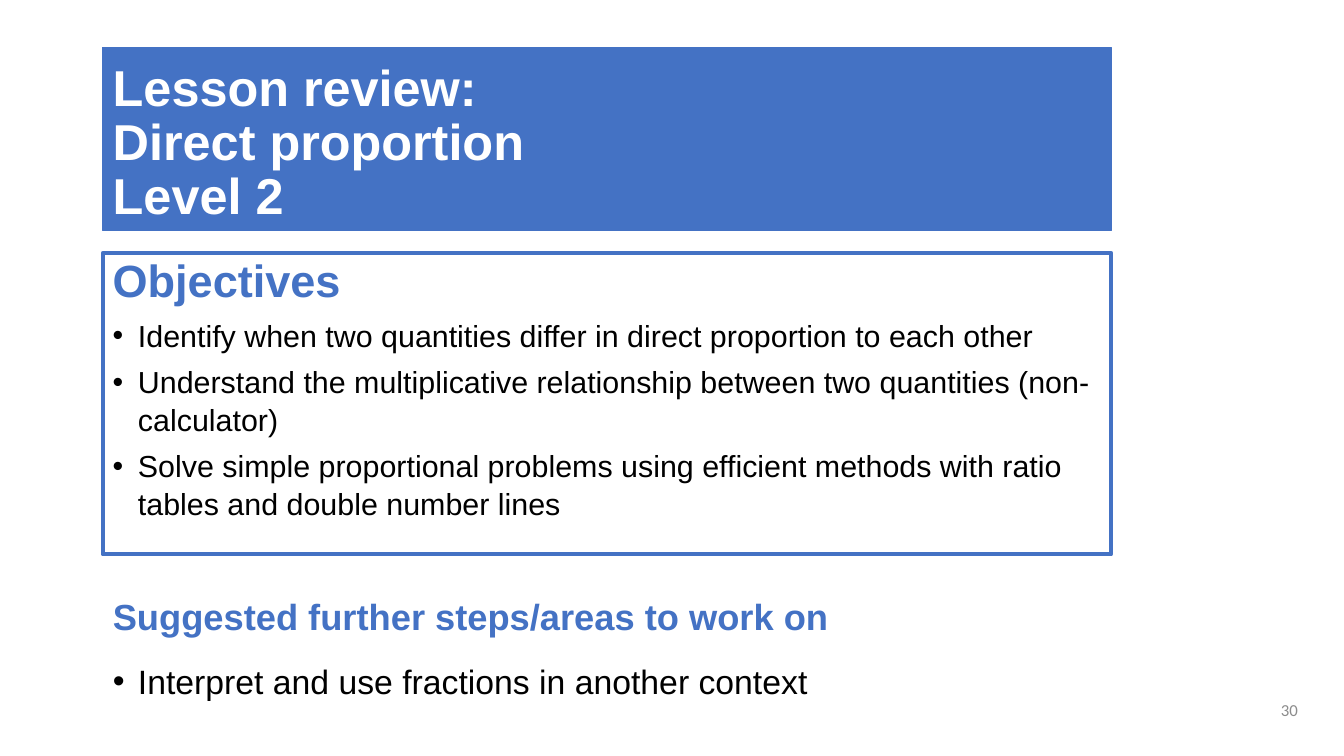
import pptx
import pptx.dml.color
import pptx.enum.shapes
import pptx.enum.text
import pptx.util
from lxml import etree
from pptx.oxml.ns import qn

COLORS = {"blue": "4472C4", "white": "FFFFFF", "black": "000000", "gray": "8C8C8C"}
WIDTH, HEIGHT = 13.33, 7.5

# Shares of the slide: left, top, width, height
LEFT, PANEL_WIDTH = 1.02 / WIDTH, 10 / WIDTH
TITLE_AREA = (LEFT, 0.47 / HEIGHT, PANEL_WIDTH, 1.82 / HEIGHT)
OBJECTIVES_AREA = (LEFT, 2.51 / HEIGHT, PANEL_WIDTH, 2.99 / HEIGHT)
NEXT_STEPS_AREA = (LEFT, 5.84 / HEIGHT, 10.45 / WIDTH, 1.18 / HEIGHT)
NUMBER_AREA = (9.97 / WIDTH, 6.84 / HEIGHT, 3 / WIDTH, 0.4 / HEIGHT)

TITLE_LINES = ["Lesson review:", "Direct proportion", "Level 2"]
OBJECTIVES = [
    "Identify when two quantities differ in direct proportion to each other",
    "Understand the multiplicative relationship between two quantities (non-calculator)",
    "Solve simple proportional problems using efficient methods with ratio tables and double number lines",
]
NEXT_STEPS = ["Interpret and use fractions in another context"]


def rgb(name):
    return pptx.dml.color.RGBColor.from_string(COLORS[name])


def place(area):
    return [pptx.util.Inches(round(share * size, 2))
            for share, size in zip(area, (WIDTH, HEIGHT, WIDTH, HEIGHT))]


def prepare_frame(shape, anchor="TOP"):
    frame = shape.text_frame
    frame.word_wrap = True
    frame.vertical_anchor = getattr(pptx.enum.text.MSO_ANCHOR, anchor)
    return frame


def add_panel(slide, area, line_width, fill=None, anchor="TOP"):
    shape = slide.shapes.add_shape(pptx.enum.shapes.MSO_SHAPE.RECTANGLE, *place(area))
    shape.shadow.inherit = False
    if fill:
        shape.fill.solid()
        shape.fill.fore_color.rgb = rgb(fill)
    else:
        shape.fill.background()
    shape.line.color.rgb = rgb("blue")
    shape.line.width = pptx.util.Pt(line_width)
    return prepare_frame(shape, anchor)


def add_text_area(slide, area, anchor="TOP"):
    return prepare_frame(slide.shapes.add_textbox(*place(area)), anchor)


def write(paragraph, lines, size, color, bold=False, font="Arial", align="LEFT", spacing=1.0):
    paragraph.alignment = getattr(pptx.enum.text.PP_ALIGN, align)
    paragraph.line_spacing = spacing
    for index, line in enumerate(lines):
        if index:
            paragraph.add_line_break()
        run = paragraph.add_run()
        run.text = line
        run.font.size = pptx.util.Pt(size)
        run.font.name = font
        run.font.bold = bold
        run.font.color.rgb = rgb(color)


def add_bullets(frame, items, size, before, spacing):
    for item in items:
        paragraph = frame.add_paragraph()
        paragraph.space_before = pptx.util.Pt(before)
        properties = paragraph._p.get_or_add_pPr()
        indent = pptx.util.Inches(0.25)
        properties.set("marL", str(indent))
        properties.set("indent", str(-indent))
        bullet_color = etree.SubElement(properties, qn("a:buClr"))
        etree.SubElement(bullet_color, qn("a:srgbClr"), val=COLORS["black"])
        etree.SubElement(properties, qn("a:buFont"), typeface="Arial")
        etree.SubElement(properties, qn("a:buChar"), char="•")
        write(paragraph, [item], size, "black", spacing=spacing)


def main():
    presentation = pptx.Presentation()
    presentation.slide_width = pptx.util.Inches(WIDTH)
    presentation.slide_height = pptx.util.Inches(HEIGHT)
    slide = presentation.slides.add_slide(presentation.slide_layouts[6])

    # Slide number
    number = add_text_area(slide, NUMBER_AREA, "MIDDLE")
    write(number.paragraphs[0], ["30"], 12, "gray", font="Calibri", align="RIGHT")

    # Title band
    title = add_panel(slide, TITLE_AREA, 0.75, fill="blue", anchor="BOTTOM")
    write(title.paragraphs[0], TITLE_LINES, 36, "white", bold=True, spacing=0.9)

    # Objectives
    objectives = add_panel(slide, OBJECTIVES_AREA, 3)
    write(objectives.paragraphs[0], ["Objectives"], 32.2, "blue", bold=True, spacing=0.91)
    add_bullets(objectives, OBJECTIVES, 21.7, before=6, spacing=1.04)

    # Further steps
    next_steps = add_text_area(slide, NEXT_STEPS_AREA)
    write(next_steps.paragraphs[0], ["Suggested further steps/areas to work on"],
          25.9, "blue", bold=True, spacing=1.01)
    add_bullets(next_steps, NEXT_STEPS, 24.1, before=16, spacing=1.01)

    presentation.save("out.pptx")


if __name__ == "__main__":
    main()
